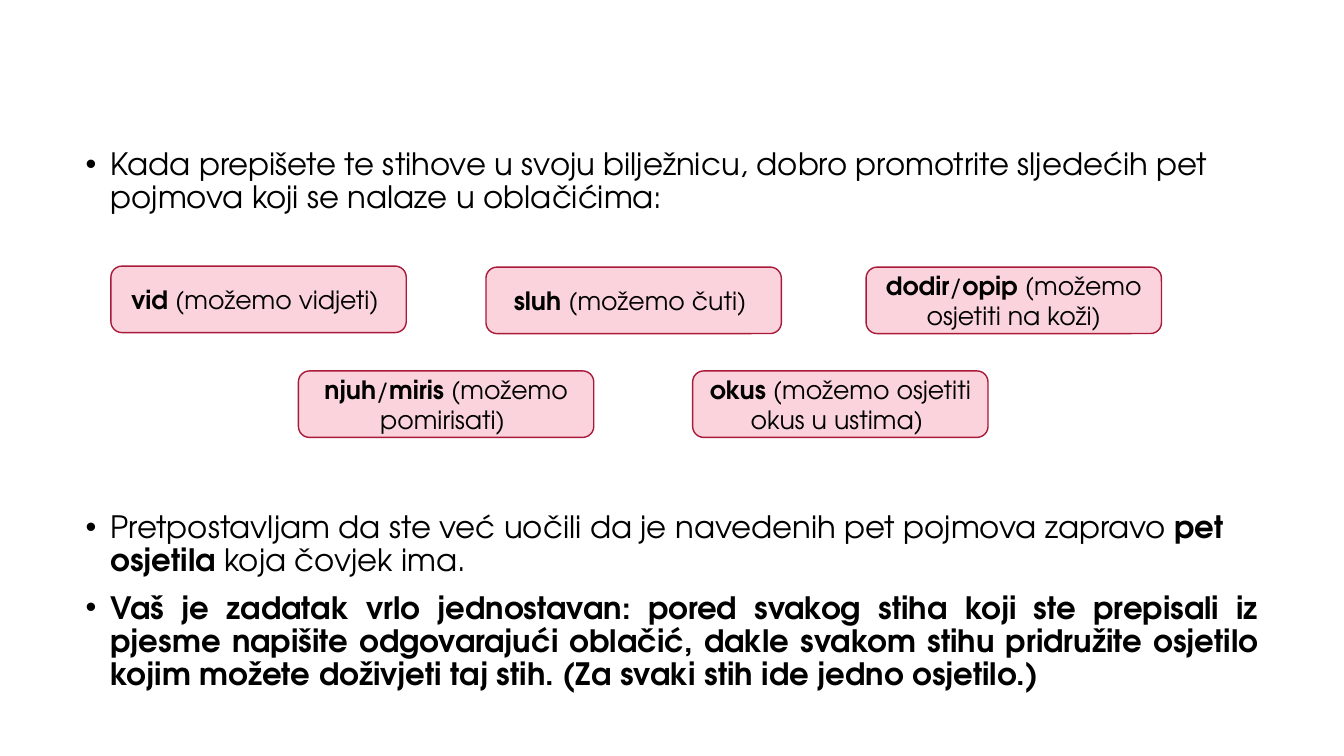
from lxml import etree
from pptx import Presentation
from pptx.dml.color import RGBColor
from pptx.enum.shapes import MSO_SHAPE
from pptx.enum.text import MSO_ANCHOR, PP_ALIGN
from pptx.oxml.ns import qn
from pptx.util import Pt

PX = 9144
ROUNDED = MSO_SHAPE.ROUNDED_RECTANGLE
MIDDLE = MSO_ANCHOR.MIDDLE
LEFT, CENTER, JUSTIFY = PP_ALIGN.LEFT, PP_ALIGN.CENTER, PP_ALIGN.JUSTIFY


def color(value):
    return RGBColor.from_string(value)


def add_runs(paragraph, parts, size):
    for text, bold in parts:
        run = paragraph.add_run()
        run.text = text
        run.font.name = "TeX Gyre Adventor"
        run.font.size = Pt(size)
        run.font.bold = bold
        run.font.color.rgb = color("000000")


presentation = Presentation()
presentation.slide_width = 1333 * PX
presentation.slide_height = 750 * PX
slide = presentation.slides.add_slide(presentation.slide_layouts[6])

instructions = [
    (143, 90, [
        (LEFT, [("Kada prepišete te stihove u svoju bilježnicu, dobro promotrite sljedećih pet "
                 "pojmova koji se nalaze u oblačićima:", False)]),
    ]),
    (503, 192, [
        (LEFT, [("Pretpostavljam da ste već uočili da je navedenih pet pojmova zapravo ", False),
                ("pet osjetila", True), (" koja čovjek ima.", False)]),
        (JUSTIFY, [("Vaš je zadatak vrlo jednostavan: pored svakog stiha koji ste prepisali iz "
                    "pjesme napišite odgovarajući oblačić, dakle svakom stihu pridružite osjetilo "
                    "kojim možete doživjeti taj stih. (Za svaki stih ide jedno osjetilo.)", True)]),
    ]),
]
for top, height, bullets in instructions:
    box = slide.shapes.add_textbox(75 * PX, top * PX, 1183 * PX, height * PX)
    frame = box.text_frame
    frame.word_wrap = True
    for index, (alignment, parts) in enumerate(bullets):
        paragraph = frame.add_paragraph() if index else frame.paragraphs[0]
        paragraph.alignment = alignment
        paragraph.line_spacing = 0.9
        paragraph.space_before = Pt(10 if index else 0)
        properties = paragraph._p.get_or_add_pPr()
        properties.set("marL", str(25 * PX))
        properties.set("indent", str(-25 * PX))
        etree.SubElement(properties, qn("a:buFont")).set("typeface", "Arial")
        etree.SubElement(properties, qn("a:buChar")).set("char", "•")
        add_runs(paragraph, parts, 22)

senses = [
    (110, 264, [("vid ", True), ("(možemo vidjeti) ", False)]),
    (482, 265, [("sluh ", True), ("(možemo čuti) ", False)]),
    (859, 265, [("dodir", True), ("/", False), ("opip ", True), ("(možemo osjetiti na koži)", False)]),
    (296, 368, [("njuh", True), ("/", False), ("miris ", True), ("(možemo pomirisati) ", False)]),
    (687, 368, [("okus ", True), ("(možemo osjetiti okus u ustima) ", False)]),
]
for left, top, parts in senses:
    cloud = slide.shapes.add_shape(ROUNDED, left * PX, top * PX, 293 * PX, 66 * PX)
    cloud.shadow.inherit = False
    cloud.fill.solid()
    cloud.fill.fore_color.rgb = color("FAD3DC")
    cloud.line.color.rgb = color("A9193A")
    cloud.line.width = Pt(1)
    frame = cloud.text_frame
    frame.word_wrap = True
    frame.vertical_anchor = MIDDLE
    frame.paragraphs[0].alignment = CENTER
    add_runs(frame.paragraphs[0], parts, 18)

presentation.save("out.pptx")
